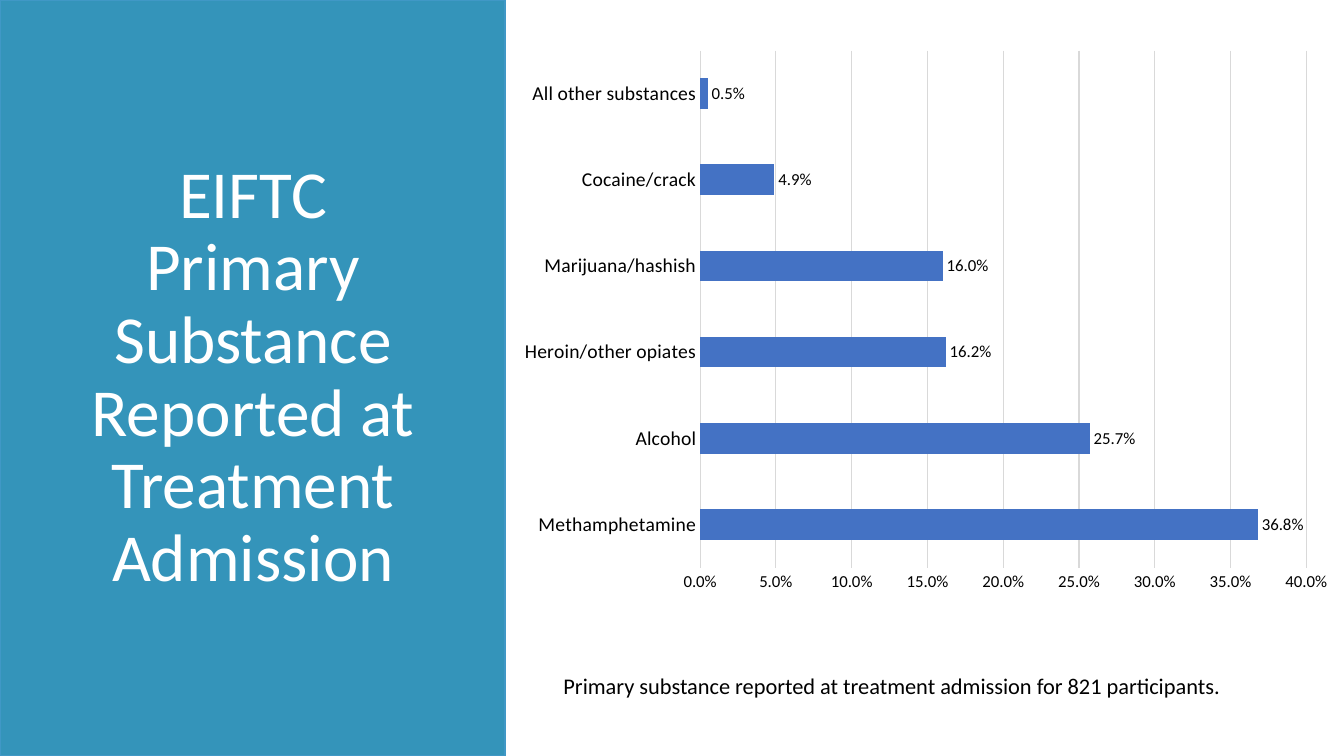
from pptx import Presentation
from pptx.chart.data import CategoryChartData
from pptx.dml.color import RGBColor
from pptx.enum.chart import XL_CHART_TYPE as Kind, XL_LABEL_POSITION as Spot, XL_TICK_MARK as Tick
from pptx.enum.shapes import MSO_SHAPE as Shape
from pptx.enum.text import MSO_ANCHOR as Anchor, PP_ALIGN as Align
from pptx.util import Inches, Pt

TITLE = ["EIFTC", "Primary Substance Reported at Treatment Admission"]
NOTE = "Primary substance reported at treatment admission for 821 participants."
SHARES = {
    "Methamphetamine": 0.368,
    "Alcohol": 0.257,
    "Heroin/other opiates": 0.162,
    "Marijuana/hashish": 0.16,
    "Cocaine/crack": 0.049,
    "All other substances": 0.005,
}
FACE, BLACK, WHITE, GRAY = "Calibri", "000000", "FFFFFF", "D9D9D9"
PANEL, EDGE, BAR = "3494BA", "4098C6", "4472C4"
PERCENT = "0.0%"


def paint(color, code):
    color.rgb = RGBColor.from_string(code)


def fill(part, code):
    part.fill.solid()
    paint(part.fill.fore_color, code)


def rule(line, code, width):
    fill(line, code)
    line.width = Pt(width)


def style(font, size, code=BLACK):
    font.name, font.size = FACE, Pt(size)
    paint(font.color, code)


def add_text(slide, box, lines, size, code):
    frame = slide.shapes.add_textbox(*map(Inches, box)).text_frame
    frame.word_wrap = True
    frame.text = "\n".join(lines)
    for para in frame.paragraphs:
        for run in para.runs:
            style(run.font, size, code)
    return frame


def add_bars(slide, box):
    data = CategoryChartData(number_format=PERCENT)
    data.categories = list(SHARES)
    data.add_series("Series 1", list(SHARES.values()))
    chart = slide.shapes.add_chart(Kind.BAR_CLUSTERED, *map(Inches, box), data).chart
    chart.has_legend = chart.has_title = False
    style(chart.font, 10)

    plot = chart.plots[0]
    plot.gap_width, plot.vary_by_categories = 182, False
    fill(plot.series[0].format, BAR)
    plot.has_data_labels = True
    labels = plot.data_labels
    labels.show_value = True
    labels.position = Spot.OUTSIDE_END
    labels.number_format, labels.number_format_is_linked = PERCENT, False
    style(labels.font, 12)

    names, scale = chart.category_axis, chart.value_axis
    for axis, size in ((names, 14), (scale, 12)):
        axis.major_tick_mark = axis.minor_tick_mark = Tick.NONE
        style(axis.tick_labels.font, size)
    names.has_major_gridlines = False
    rule(names.format.line, GRAY, 0.75)
    scale.minimum_scale, scale.maximum_scale, scale.major_unit = 0, 0.4, 0.05
    scale.tick_labels.number_format = PERCENT
    scale.tick_labels.number_format_is_linked = False
    scale.format.line.fill.background()
    rule(scale.major_gridlines.format.line, GRAY, 0.75)


def main():
    deck = Presentation()
    deck.slide_width, deck.slide_height = Inches(13.33), Inches(7.5)
    slide = deck.slides.add_slide(deck.slide_layouts[6])

    panel = slide.shapes.add_shape(Shape.RECTANGLE, 0, 0, Inches(5.01), Inches(7.5))
    panel.shadow.inherit = False
    fill(panel, PANEL)
    rule(panel.line, EDGE, 1)

    title = add_text(slide, (0.59, 0.7, 3.84, 6.1), TITLE, 48, WHITE)
    title.vertical_anchor = Anchor.MIDDLE
    for para in title.paragraphs:
        para.alignment, para.line_spacing = Align.CENTER, 0.9

    add_text(slide, (5.49, 6.62, 7.72, 0.37), [NOTE], 16, BLACK)
    add_bars(slide, (5.04, 0.39, 8.29, 5.59))
    deck.save("out.pptx")


if __name__ == "__main__":
    main()
